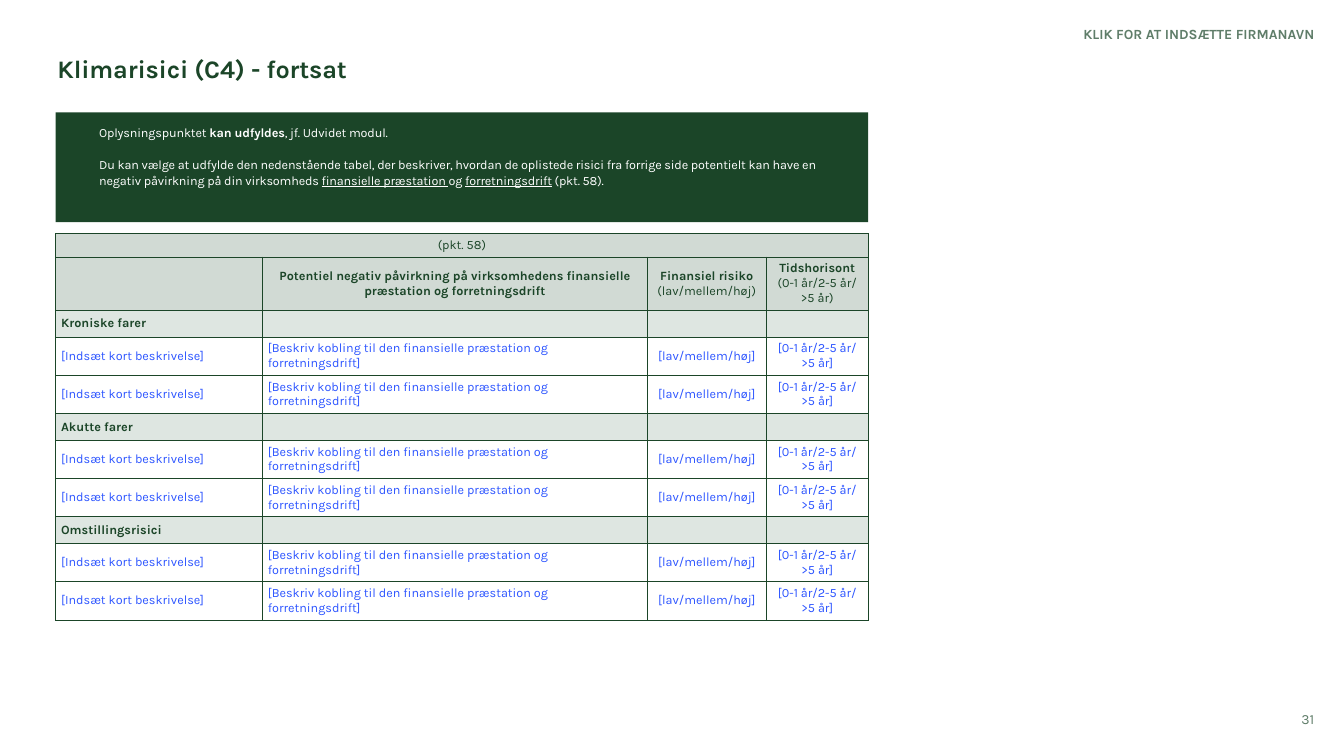
from lxml.etree import SubElement
from pptx import Presentation
from pptx.dml.color import RGBColor
from pptx.enum.shapes import MSO_SHAPE
from pptx.enum.text import MSO_ANCHOR, PP_ALIGN
from pptx.oxml.ns import qn
from pptx.util import Cm, Pt

FONT = "Karla"
COLORS = {"green": "1B4528", "muted": "5F7D69", "header": "D1DAD4",
          "section": "DEE6E1", "input": "2D55FF", "white": "FFFFFF"}

TITLE = "Klimarisici (C4) - fortsat"
COMPANY = "KLIK FOR AT INDSÆTTE FIRMANAVN"
PAGE = "31"
INTRO = [
    [("Oplysningspunktet ", ""), ("kan udfyldes", "b"), (", jf. Udvidet modul.", "")],
    [("Du kan vælge at udfylde den nedenstående tabel, der beskriver, hvordan de oplistede "
      "risici fra forrige side potentielt kan have en negativ påvirkning på din virksomheds ", ""),
     ("finansielle præstation ", "u"), ("og ", ""), ("forretningsdrift", "u"), (" (pkt. 58).", "")],
]
REFERENCE = "(pkt. 58)"
HEADERS = [
    [],
    [("Potentiel negativ påvirkning på virksomhedens finansielle præstation og forretningsdrift", "b")],
    [("Finansiel risiko", "b"), ("(lav/mellem/høj)", "")],
    [("Tidshorisont", "b"), ("(0-1 år/2-5 år/ >5 år)", "")],
]
SECTIONS = ["Kroniske farer", "Akutte farer", "Omstillingsrisici"]
PROMPTS = ["[Indsæt kort beskrivelse]",
           "[Beskriv kobling til den finansielle præstation og forretningsdrift]",
           "[lav/mellem/høj]", "[0-1 år/2-5 år/ >5 år]"]
PROMPT_ROWS = 2

LEFT, WIDTH = 1.4, 20.48
COL_WIDTHS = [5.21, 9.7, 3.0, 2.57]
REFERENCE_H, HEADER_H, SECTION_H, PROMPT_H = 0.58, 1.32, 0.67, 0.95
LEFT_ALIGN, CENTER, RIGHT = PP_ALIGN.LEFT, PP_ALIGN.CENTER, PP_ALIGN.RIGHT


def rgb(name):
    """Return the named colour."""
    return RGBColor.from_string(COLORS[name])


def write(tf, paras, size, color, align=LEFT_ALIGN, spacing=None, after=0, track=0):
    """Fill a text frame with paragraphs given as lists of (text, style) runs."""
    tf.word_wrap = True
    for i, runs in enumerate(paras):
        p = tf.paragraphs[0] if i == 0 else tf.add_paragraph()
        p.alignment = align
        p.line_spacing = spacing
        p.space_after = Pt(after if i < len(paras) - 1 else 0)
        for text, style in runs:
            r = p.add_run()
            r.text = text
            r.font.name = FONT
            r.font.size = Pt(size)
            r.font.bold = "b" in style
            r.font.underline = "u" in style
            r.font.color.rgb = rgb(color)
            if track:
                r.font._element.set("spc", str(track))


def set_margins(tf, left=0, top=0, right=0, bottom=0):
    """Set the inner margins in centimetres."""
    tf.margin_left, tf.margin_top = Cm(left), Cm(top)
    tf.margin_right, tf.margin_bottom = Cm(right), Cm(bottom)


def add_label(s, box, text, style, size, color, align, **kwargs):
    """Add a single-line text box."""
    tf = s.shapes.add_textbox(*map(Cm, box)).text_frame
    set_margins(tf)
    write(tf, [[(text, style)]], size, color, align, **kwargs)


def style_cell(cell, lines, fill, color, align):
    """Write, border and fill one table cell."""
    set_margins(cell, 0.14, 0.1, 0.14, 0.1)
    cell.vertical_anchor = MSO_ANCHOR.MIDDLE
    tf = cell.text_frame
    write(tf, [[line] for line in lines], 9, color, align)
    if not lines:
        SubElement(tf.paragraphs[0]._p, qn("a:endParaRPr"), sz="900")
    tcPr = cell._tc.get_or_add_tcPr()
    for side in ("a:lnL", "a:lnR", "a:lnT", "a:lnB"):
        ln = SubElement(tcPr, qn(side), w=str(Pt(0.5)))
        SubElement(SubElement(ln, qn("a:solidFill")), qn("a:srgbClr"), val=COLORS["green"])
    cell.fill.solid()
    cell.fill.fore_color.rgb = rgb(fill)


def add_risk_table(s):
    """Build the risk table with its sections and prompt rows."""
    aligns = [LEFT_ALIGN, LEFT_ALIGN, CENTER, CENTER]
    blanks = [[]] * (len(COL_WIDTHS) - 1)
    prompts = [[(text, "")] for text in PROMPTS]
    rows = [(REFERENCE_H, [[(REFERENCE, "")]] + blanks, "header", "green", [CENTER] * 4),
            (HEADER_H, HEADERS, "header", "green", [CENTER] * 4)]
    for name in SECTIONS:
        rows.append((SECTION_H, [[(name, "b")]] + blanks, "section", "green", aligns))
        rows += [(PROMPT_H, prompts, "white", "input", aligns)] * PROMPT_ROWS
    height = sum(row[0] for row in rows)
    frame = s.shapes.add_table(len(rows), len(COL_WIDTHS), Cm(LEFT), Cm(5.89), Cm(WIDTH), Cm(height))
    table = frame.table
    table.first_row = table.horz_banding = False
    for col, width in zip(table.columns, COL_WIDTHS):
        col.width = Cm(width)
    for i, (row_h, cells, fill, color, row_aligns) in enumerate(rows):
        table.rows[i].height = Cm(row_h)
        for j, lines in enumerate(cells):
            style_cell(table.cell(i, j), lines, fill, color, row_aligns[j])
    table.cell(0, 0).merge(table.cell(0, len(COL_WIDTHS) - 1))


def main():
    """Build and save the slide."""
    prs = Presentation()
    prs.slide_width, prs.slide_height = Cm(33.87), Cm(19.05)
    s = prs.slides.add_slide(prs.slide_layouts[6])
    add_label(s, (1.45, 1.42, 31.0, 0.69), TITLE, "b", 18, "green", LEFT_ALIGN, spacing=0.9, track=-10)
    add_label(s, (25.5, 17.9, 7.62, 0.43), PAGE, "", 10, "muted", RIGHT)
    add_label(s, (23.01, 0.64, 10.11, 0.43), COMPANY, "b", 10, "muted", RIGHT)

    sp = s.shapes.add_shape(MSO_SHAPE.RECTANGLE, Cm(LEFT), Cm(2.83), Cm(WIDTH), Cm(2.77))
    sp.shadow.inherit = False
    sp.fill.solid()
    sp.fill.fore_color.rgb = rgb("green")
    sp.line.fill.background()
    tf = sp.text_frame
    set_margins(tf, 1.1, 0.3, 0.3, 0.4)
    tf.vertical_anchor = MSO_ANCHOR.TOP
    write(tf, INTRO, 9, "white", spacing=1.06, after=11.4, track=-10)

    add_risk_table(s)
    prs.save("out.pptx")


if __name__ == "__main__":
    main()
